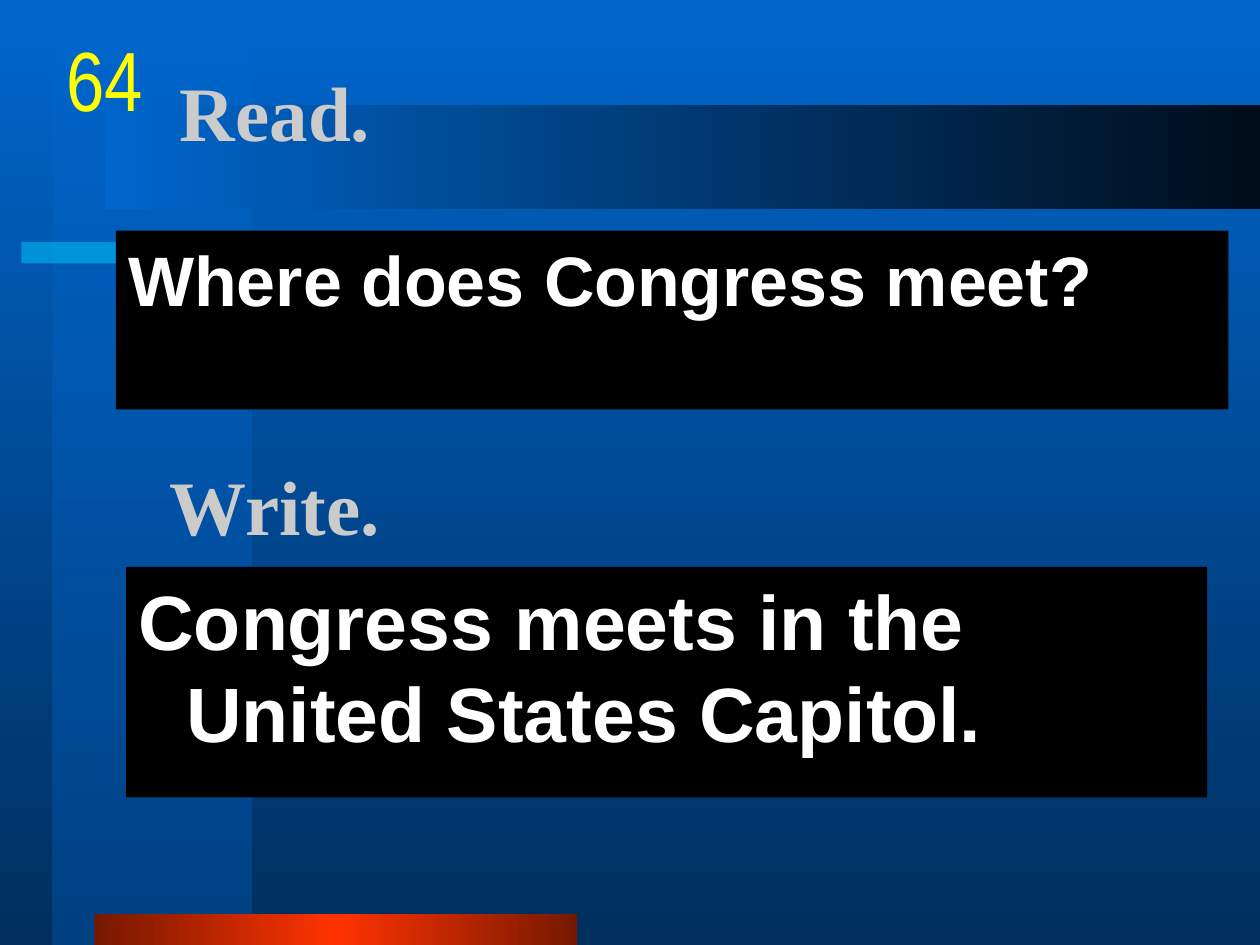
import pptx
import pptx.dml.color
import pptx.enum.shapes
import pptx.enum.text
import pptx.oxml
import pptx.oxml.ns
import pptx.util
from pptx.util import Inches

ANCHOR = pptx.enum.text.MSO_ANCHOR
ALIGN = pptx.enum.text.PP_ALIGN


def rgb(value):
    return pptx.dml.color.RGBColor.from_string(value)


def color_xml(value, alpha=100):
    ns = pptx.oxml.ns.nsdecls("a")
    return f'<a:srgbClr {ns} val="{value}"><a:alpha val="{alpha * 1000}"/></a:srgbClr>'


def set_gradient(fill, colors, angle=0, alpha=100):
    """Spread colors evenly; angle runs counter-clockwise from left to right."""
    fill.gradient()
    fill.gradient_angle = angle
    stops = fill.gradient_stops[0]._gs.getparent()
    for stop in list(stops):
        stops.remove(stop)
    for i, value in enumerate(colors):
        position = round(100000 * i / (len(colors) - 1))
        stops.append(pptx.oxml.parse_xml(
            f'<a:gs {pptx.oxml.ns.nsdecls("a")} pos="{position}">'
            f'{color_xml(value, alpha)}</a:gs>'))


def add_rect(slide, box, colors, angle=0, alpha=100):
    sp = slide.shapes.add_shape(
        pptx.enum.shapes.MSO_SHAPE.RECTANGLE, *map(Inches, box))
    sp.shadow.inherit = False
    sp.line.fill.background()
    # A single colour is a gradient between two equal stops only when transparent.
    if len(colors) == 1 and alpha == 100:
        sp.fill.solid()
        sp.fill.fore_color.rgb = rgb(colors[0])
    else:
        set_gradient(sp.fill, colors if len(colors) > 1 else colors * 2, angle, alpha)
    return sp


def set_text(sp, text, font="Arial", size=44, color="FFFFFF", bold=True,
             align=ALIGN.LEFT, anchor=ANCHOR.TOP, wrap=True, margin=0.1,
             hang=0, before=0):
    tf = sp.text_frame
    tf.word_wrap = wrap
    tf.vertical_anchor = anchor
    tf.margin_left = tf.margin_right = Inches(margin)
    p = tf.paragraphs[0]
    p.alignment = align
    p.space_before = pptx.util.Pt(before)
    if hang:
        pPr = p._p.get_or_add_pPr()
        pPr.set("marL", str(Inches(hang)))
        pPr.set("indent", str(-Inches(hang)))
    r = p.add_run()
    r.text = text
    r.font.name = font
    r.font.size = pptx.util.Pt(size)
    r.font.bold = bold
    r.font.color.rgb = rgb(color)


def add_label(slide, box, text, **text_format):
    sp = slide.shapes.add_textbox(*map(Inches, box))
    set_text(sp, text, **text_format)


def add_heading(slide, box, text):
    add_label(slide, box, text, font="Times New Roman", color="CBCBCB",
              anchor=ANCHOR.MIDDLE)


def add_sentence(slide, box, text, size):
    sp = add_rect(slide, box, ["000000"])
    set_text(sp, text, size=size, hang=0.38, before=4)


def add_number(slide, box, text):
    add_label(slide, box, text, font="Arial Narrow", size=48, color="FFFF00",
              bold=False, align=ALIGN.CENTER, wrap=False, margin=0)


def add_backdrop(slide):
    set_gradient(slide.background.fill, ["0066CC", "002F5E"], angle=270)
    add_rect(slide, (0.42, 0, 1.58, 7.5), ["0066CC", "0053A6"], angle=270, alpha=50)
    add_rect(slide, (0.17, 1.92, 5.17, 0.17), ["00CCFF"], alpha=50)
    add_rect(slide, (0.75, 7.25, 3.83, 0.25), ["761800", "FF3300", "761800"])
    add_rect(slide, (0.83, 0.83, 9.17, 0.83), ["0066CC", "000D1A"])


def main():
    prs = pptx.Presentation()
    prs.slide_width, prs.slide_height = Inches(10), Inches(7.5)
    slide = prs.slides.add_slide(prs.slide_layouts[6])
    add_backdrop(slide)
    add_heading(slide, (1.33, 0.25, 8.5, 1.25), "Read.")
    add_sentence(slide, (0.92, 1.83, 8.83, 1.42), "Where does Congress meet?", 40)
    add_heading(slide, (1.25, 3.17, 8.5, 1.67), "Write.")
    add_sentence(slide, (1, 4.5, 8.58, 1.83),
                 "Congress meets in the United States Capitol.", 44)
    add_number(slide, (0.48, 0.17, 0.7, 0.83), "64")
    prs.save("out.pptx")


if __name__ == "__main__":
    main()
